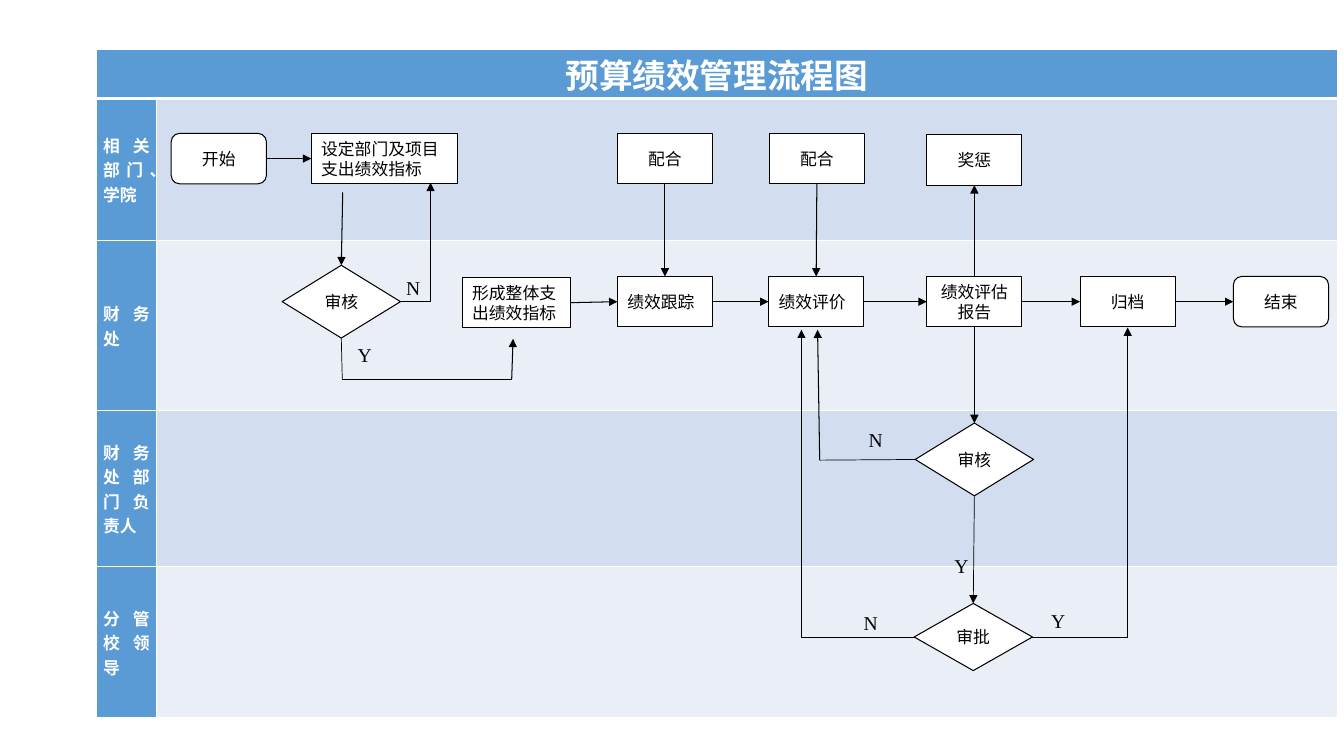
from dataclasses import dataclass
from typing import Any

from lxml import etree
from pptx import Presentation
from pptx import util as u
from pptx.dml import color
from pptx.enum import lang, shapes, text
from pptx.oxml import ns

Pt = u.Pt
GEOMETRY = shapes.MSO_SHAPE
LEFT, CENTER, JUSTIFY = text.PP_ALIGN.LEFT, text.PP_ALIGN.CENTER, text.PP_ALIGN.JUSTIFY
TOP_SIDE, LEFT_SIDE, BOTTOM_SIDE, RIGHT_SIDE = range(4)


@dataclass(frozen=True)
class Theme:
    ink: str = "000000"
    paper: str = "FFFFFF"
    header: str = "5B9BD5"
    bands: tuple = ("D2DEEF", "EAEFF7")
    serif: str = "Times New Roman"
    sans: str = "Calibri"
    title_size: int = 24
    body_size: int = 12
    label_size: int = 14
    outline: float = 0.75
    hairline: float = 0.5
    border: int = 1
    title_border: int = 3


def apply(target, values):
    for name, value in values.items():
        setattr(target, name, value)


def rgb(value):
    return color.RGBColor.from_string(value)


@dataclass
class Flowchart:
    theme: Theme
    slide: Any

    def add_words(self, frame, words, size, ink, align=LEFT, bold=False, face=None):
        paragraph = frame.paragraphs[0]
        paragraph.alignment = align
        run = paragraph.add_run()
        run.text = words
        run.font.color.rgb = rgb(ink)
        apply(run.font, {"size": Pt(size), "bold": bold, "name": face or self.theme.serif,
                         "language_id": lang.MSO_LANGUAGE_ID.SIMPLIFIED_CHINESE})

    def fill_cell(self, cell, fill, top=1, bottom=1):
        apply(cell, {"margin_left": Pt(5), "margin_right": Pt(5),
                     "margin_top": 0, "margin_bottom": 0})
        cell.fill.solid()
        cell.fill.fore_color.rgb = rgb(fill)
        properties = cell._tc.get_or_add_tcPr()
        widths = {"a:lnL": self.theme.border, "a:lnR": self.theme.border,
                  "a:lnT": top, "a:lnB": bottom}
        for position, (side, width) in enumerate(widths.items()):
            border = etree.Element(ns.qn(side), w=str(Pt(width)))
            solid = etree.SubElement(border, ns.qn("a:solidFill"))
            etree.SubElement(solid, ns.qn("a:srgbClr"), val=self.theme.paper)
            properties.insert(position, border)

    def lanes(self, title, names, left, top, widths, heights):
        style = self.theme
        table = self.slide.shapes.add_table(
            len(heights), len(widths), Pt(left), Pt(top),
            Pt(sum(widths)), Pt(sum(heights))).table
        apply(table, {"first_row": False, "horz_banding": False})
        for column, width in zip(table.columns, widths):
            column.width = Pt(width)
        for row, height in zip(table.rows, heights):
            row.height = Pt(height)
        for cell in table.rows[0].cells:
            self.fill_cell(cell, style.header, bottom=style.title_border)
        heading = table.cell(0, 0)
        heading.merge(table.cell(0, 1))
        self.add_words(heading.text_frame, title, style.title_size, style.paper, CENTER, True)
        for index, name in enumerate(names):
            top_border = style.border if index else style.title_border
            department, lane = table.rows[index + 1].cells
            self.fill_cell(department, style.header, top_border)
            self.fill_cell(lane, style.bands[index % 2], top_border)
            department.vertical_anchor = text.MSO_ANCHOR.MIDDLE
            department._tc.get_or_add_tcPr().set("vert", "eaVert")
            self.add_words(department.text_frame, name, style.body_size, style.paper,
                           JUSTIFY, True, style.sans)

    def step(self, words, x, y, width=68, height=36, geometry=GEOMETRY.RECTANGLE, align=CENTER):
        step = self.slide.shapes.add_shape(
            geometry, Pt(x - width / 2), Pt(y - height / 2), Pt(width), Pt(height))
        step.shadow.inherit = False
        step.fill.solid()
        step.fill.fore_color.rgb = rgb(self.theme.paper)
        step.line.color.rgb = rgb(self.theme.ink)
        step.line.width = Pt(self.theme.outline)
        apply(step.text_frame, {"word_wrap": True, "vertical_anchor": text.MSO_ANCHOR.MIDDLE})
        self.add_words(step.text_frame, words, self.theme.body_size, self.theme.ink, align)
        return step

    def terminal(self, words, x, y):
        return self.step(words, x, y, geometry=GEOMETRY.FLOWCHART_ALTERNATE_PROCESS)

    def decision(self, words, x, y, height=52):
        return self.step(words, x, y, 84.5, height, GEOMETRY.DIAMOND)

    def label(self, words, left, top):
        box = self.slide.shapes.add_textbox(Pt(left), Pt(top), Pt(36), Pt(24.5))
        box.text_frame.word_wrap = True
        self.add_words(box.text_frame, words, self.theme.label_size, self.theme.ink)

    def link(self, start, end, width=None, arrow=True, elbow=False):
        kind = shapes.MSO_CONNECTOR.ELBOW if elbow else shapes.MSO_CONNECTOR.STRAIGHT
        points = [(0, 0) if hasattr(place[0], "shape_id") else place for place in (start, end)]
        link = self.slide.shapes.add_connector(
            kind, *(Pt(value) for point in points for value in point))
        for place, join in ((start, link.begin_connect), (end, link.end_connect)):
            if hasattr(place[0], "shape_id"):
                join(*place)
        link.line.color.rgb = rgb(self.theme.ink)
        link.line.width = Pt(width or self.theme.outline)
        properties = link.element.spPr
        if elbow:
            properties.find(ns.qn("a:prstGeom")).set("prst", "bentConnector2")
        if arrow:
            etree.SubElement(properties.find(ns.qn("a:ln")), ns.qn("a:tailEnd"), type="triangle")
        etree.SubElement(properties, ns.qn("a:effectLst"))


def main():
    deck = Presentation()
    apply(deck, {"slide_width": Pt(960), "slide_height": Pt(540)})
    theme = Theme()
    chart = Flowchart(theme, deck.slides.add_slide(deck.slide_layouts[6]))
    thin = theme.hairline

    chart.lanes("预算绩效管理流程图", ["相关部门、学院", "财务处", "财务处部门负责人", "分管校领导"],
                68.6, 35.5, (43.2, 843.6), (28.8, 101.4, 121.6, 111.6, 108))

    upper, middle = 113.3, 215.5
    tracking_x, evaluation_x, report_x, archive_x, finish_x = 475, 583, 696, 805.5, 915
    start = chart.terminal("开始", 156.3, upper)
    targets = chart.step("设定部门及项目支出绩效指标", 274.6, upper, 104.5, align=LEFT)
    target_review = chart.decision("审核", 243.8, middle)
    overall = chart.step("形成整体支出绩效指标", 369, 216.2, 77.5, align=LEFT)
    tracking_help = chart.step("配合", tracking_x, upper)
    evaluation_help = chart.step("配合", evaluation_x + 0.5, upper)
    reward = chart.step("奖惩", report_x, 114.3)
    tracking = chart.step("绩效跟踪", tracking_x, middle, align=LEFT)
    evaluation = chart.step("绩效评价", evaluation_x, middle, align=LEFT)
    report = chart.step("绩效评估报告", report_x, middle)
    archive = chart.step("归档", archive_x, middle)
    finish = chart.terminal("结束", finish_x, middle)
    report_review = chart.decision("审核", report_x, 328.2)
    approval = chart.decision("审批", 695.2, 455, 48)

    for before, after in ((start, targets), (overall, tracking), (tracking, evaluation),
                          (evaluation, report), (report, archive), (archive, finish)):
        chart.link((before, RIGHT_SIDE), (after, LEFT_SIDE))
    for above, below in ((tracking_help, tracking), (evaluation_help, evaluation),
                         (report, report_review)):
        chart.link((above, BOTTOM_SIDE), (below, TOP_SIDE))
    chart.link((report, TOP_SIDE), (reward, BOTTOM_SIDE))
    chart.link((report_review, BOTTOM_SIDE), (approval, TOP_SIDE), thin)

    chart.link((244.8, 137.5), (target_review, TOP_SIDE))
    chart.link((target_review, RIGHT_SIDE), (307.6, 130.5), thin, elbow=True)
    chart.link((target_review, BOTTOM_SIDE), (244.5, 270.8), thin, arrow=False)
    chart.link((244.5, 270.8), (365.5, 270.8), thin, arrow=False)
    chart.link((365.5, 270.8), (366.5, 242))

    chart.link((report_review, LEFT_SIDE), (585.5, 328.7), thin, arrow=False)
    chart.link((585.5, 328.7), (584, 235.5))
    chart.link((approval, LEFT_SIDE), (572.5, 235.5), thin, elbow=True)
    chart.link((approval, RIGHT_SIDE), (archive_x, 234), thin, elbow=True)

    for words, left, top in (("N", 283, 193.7), ("Y", 248.4, 241.2), ("N", 613.4, 302.4),
                             ("Y", 674.6, 392.4), ("N", 609.8, 432.7), ("Y", 743.8, 431.3)):
        chart.label(words, left, top)
    deck.save("out.pptx")


if __name__ == "__main__":
    main()
